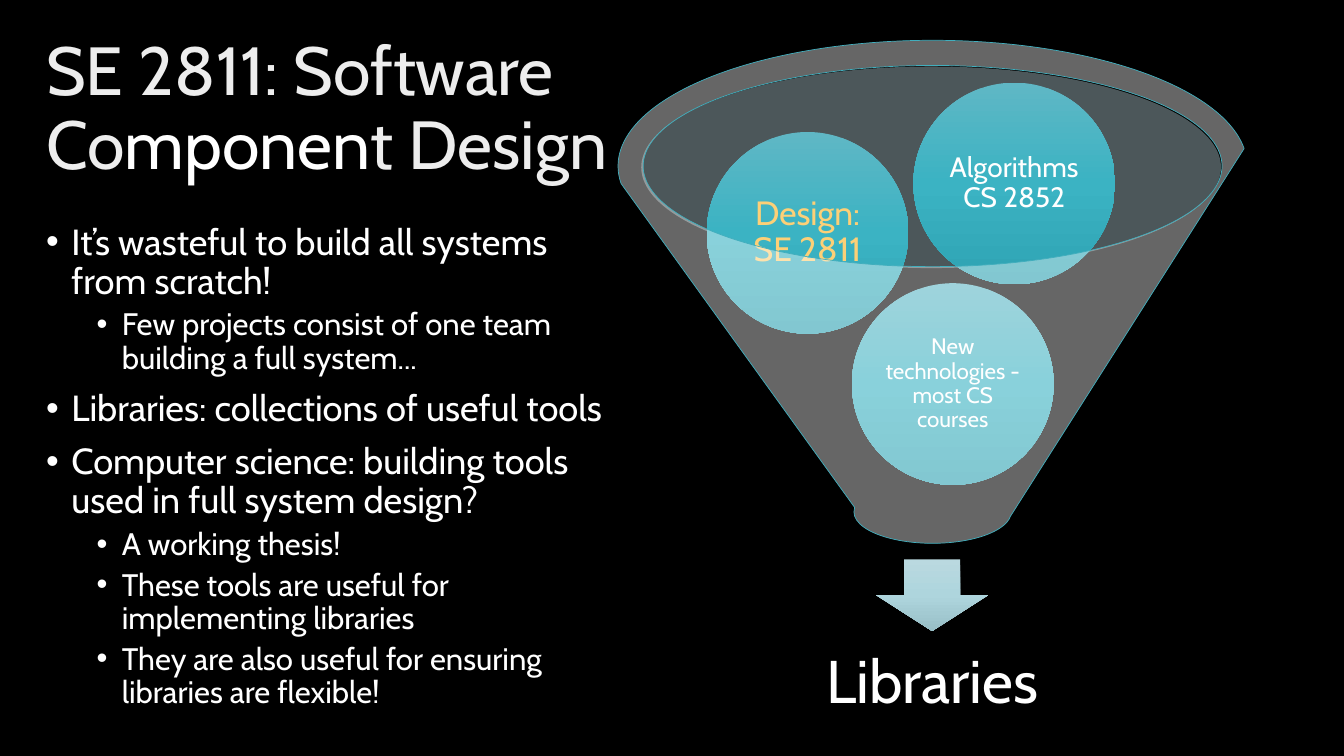
from lxml import etree
from pptx import Presentation
from pptx.dml.color import RGBColor
from pptx.enum import shapes, text
from pptx.oxml import ns
from pptx.util import Inches, Pt

SHAPE = shapes.MSO_SHAPE
TITLE_GRADIENT = [(0, "BFBFBF"), (28, "EDEDED"), (100, "FFFFFF")]
BALL_GRADIENT = [(0, "5FB7C5"), (50, "3BB3C3"), (100, "2FA3B3")]
ARROW_GRADIENT = [(0, "BAD9E0"), (50, "AED5DD"), (100, "98BFC7")]


def rgb(value):
    return RGBColor.from_string(value)


class Deck:
    font = "Cabin"
    white = "FFFFFF"

    def __init__(self):
        self.prs = Presentation()
        self.prs.slide_width = Inches(13.33)
        self.prs.slide_height = Inches(7.5)
        self.s = self.prs.slides.add_slide(self.prs.slide_layouts[6])
        fill = self.s.background.fill
        fill.solid()
        fill.fore_color.rgb = rgb("000000")

    def gradient(self, fill, element, stops, angle):
        fill.gradient()
        fill.gradient_angle = 360 - angle
        stop_list = next(element.iter(ns.qn("a:gsLst")))
        for old in list(stop_list):
            stop_list.remove(old)
        for position, color in stops:
            gs = etree.SubElement(stop_list, ns.qn("a:gs"), pos=str(position * 1000))
            etree.SubElement(gs, ns.qn("a:srgbClr"), val=color)

    def format_run(self, r, size, color):
        r.font.name = self.font
        r.font.size = Pt(size)
        r.font.color.rgb = rgb(color)

    def frame(self, sp, inset, anchor):
        tf = sp.text_frame
        tf.word_wrap = True
        tf.vertical_anchor = anchor
        tf.margin_left = tf.margin_right = Inches(inset)
        tf.margin_top = tf.margin_bottom = Inches(inset)
        return tf

    def label(self, sp, wording, size, color, inset):
        tf = self.frame(sp, inset, text.MSO_ANCHOR.MIDDLE)
        tf.text = wording
        p = tf.paragraphs[0]
        p.alignment = text.PP_ALIGN.CENTER
        p.line_spacing = 0.9
        self.format_run(p.runs[0], size, color)

    def textbox(self, box):
        return self.s.shapes.add_textbox(*map(Inches, box))

    def shape(self, kind, box):
        sp = self.s.shapes.add_shape(kind, *map(Inches, box))
        sp.shadow.inherit = False
        sp.line.fill.background()
        return sp

    def glass(self, kind, box, color, line=None):
        sp = self.shape(kind, box)
        sp.fill.solid()
        sp.fill.fore_color.rgb = rgb(color)
        clr = next(sp.element.spPr.iter(ns.qn("a:srgbClr")))
        etree.SubElement(clr, ns.qn("a:alpha"), val="40000")
        if line:
            sp.line.color.rgb = rgb(line)
            sp.line.width = Pt(0.5)

    def shaded(self, kind, box, stops):
        sp = self.shape(kind, box)
        self.gradient(sp.fill, sp.element.spPr, stops, 90)
        return sp

    def ball(self, left, top, wording, size, color, inset):
        sp = self.shaded(SHAPE.OVAL, (left, top, 2, 2), BALL_GRADIENT)
        self.label(sp, wording, size, color, inset)

    def caption(self, box, wording, size):
        self.label(self.textbox(box), wording, size, self.white, 0.05)

    def title(self, box, parts):
        tf = self.frame(self.textbox(box), 0.1, text.MSO_ANCHOR.MIDDLE)
        p = tf.paragraphs[0]
        p.line_spacing = 0.9
        for wording, shaded in parts:
            r = p.add_run()
            r.text = wording
            self.format_run(r, 48.6, self.white)
            if shaded:
                self.gradient(r.font.fill, r.font._element, TITLE_GRADIENT, 80)

    def bullets(self, box, items):
        tf = self.frame(self.textbox(box), 0.1, text.MSO_ANCHOR.TOP)
        tf.margin_top = tf.margin_bottom = Inches(0.05)
        tf.text = "\n".join(wording for _, wording in items)
        for i, (p, (level, _)) in enumerate(zip(tf.paragraphs, items)):
            p.level = level
            p.line_spacing = 0.9
            p.space_before = Pt((10, 5)[level] if i else 0)
            pPr = p._p.get_or_add_pPr()
            pPr.set("marL", str(Inches(0.25 + 0.5 * level)))
            pPr.set("indent", str(Inches(-0.25)))
            etree.SubElement(pPr, ns.qn("a:buFont"), typeface="Arial")
            etree.SubElement(pPr, ns.qn("a:buChar"), char="•")
            self.format_run(p.runs[0], (25.9, 22.2)[level], self.white)


def main():
    deck = Deck()
    deck.bullets((0.36, 2.17, 5.88, 5.12), [
        (0, "It’s wasteful to build all systems from scratch!"),
        (1, "Few projects consist of one team building a full system..."),
        (0, "Libraries: collections of useful tools"),
        (0, "Computer science: building tools used in full system design?"),
        (1, "A working thesis!"),
        (1, "These tools are useful for implementing libraries"),
        (1, "They are also useful for ensuring libraries are flexible!"),
    ])
    deck.title((0.36, 0.37, 5.88, 1.45), [
        ("SE 2811: Software Co", True),
        ("mponen", False),
        ("t Design", True),
    ])
    deck.glass(SHAPE.OVAL, (6.36, 0.66, 5.75, 2), "C0DBE1")
    deck.shaded(SHAPE.DOWN_ARROW, (8.69, 5.55, 1.11, 0.71), ARROW_GRADIENT)
    deck.caption((7.6, 6.12, 3.29, 1.34), "Libraries", 43)
    deck.ball(8.45, 2.81, "New technologies - most CS courses", 16, deck.white, 0.02)
    deck.ball(7.01, 1.31, "Design: SE 2811", 24, "FDD077", 0.03)
    deck.ball(9.06, 0.82, "Algorithms CS 2852", 20, deck.white, 0.03)
    deck.glass(SHAPE.FUNNEL, (6.13, 0.4, 6.24, 4.99), "FFFFFF", "41AEBD")
    deck.prs.save("out.pptx")


if __name__ == "__main__":
    main()
